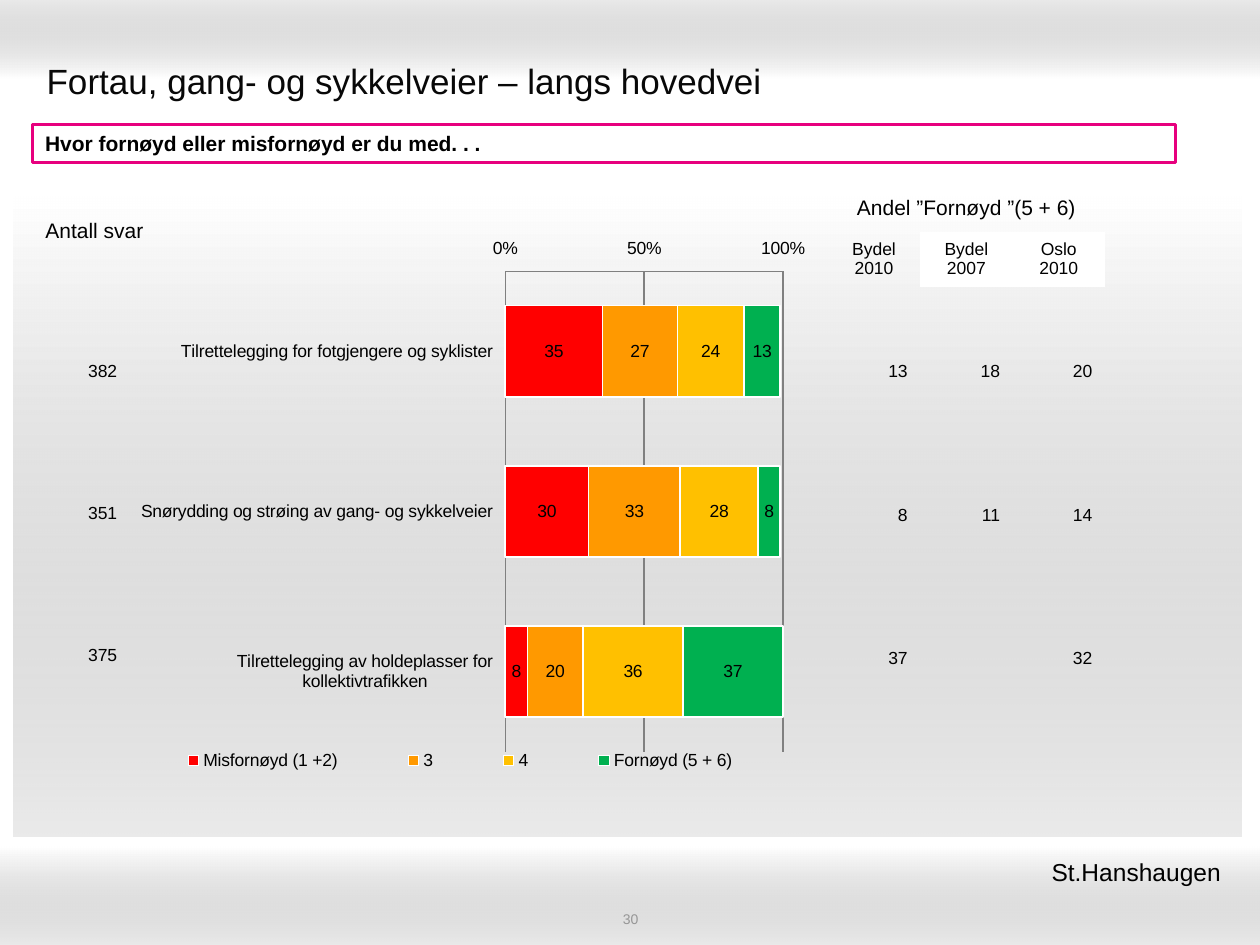
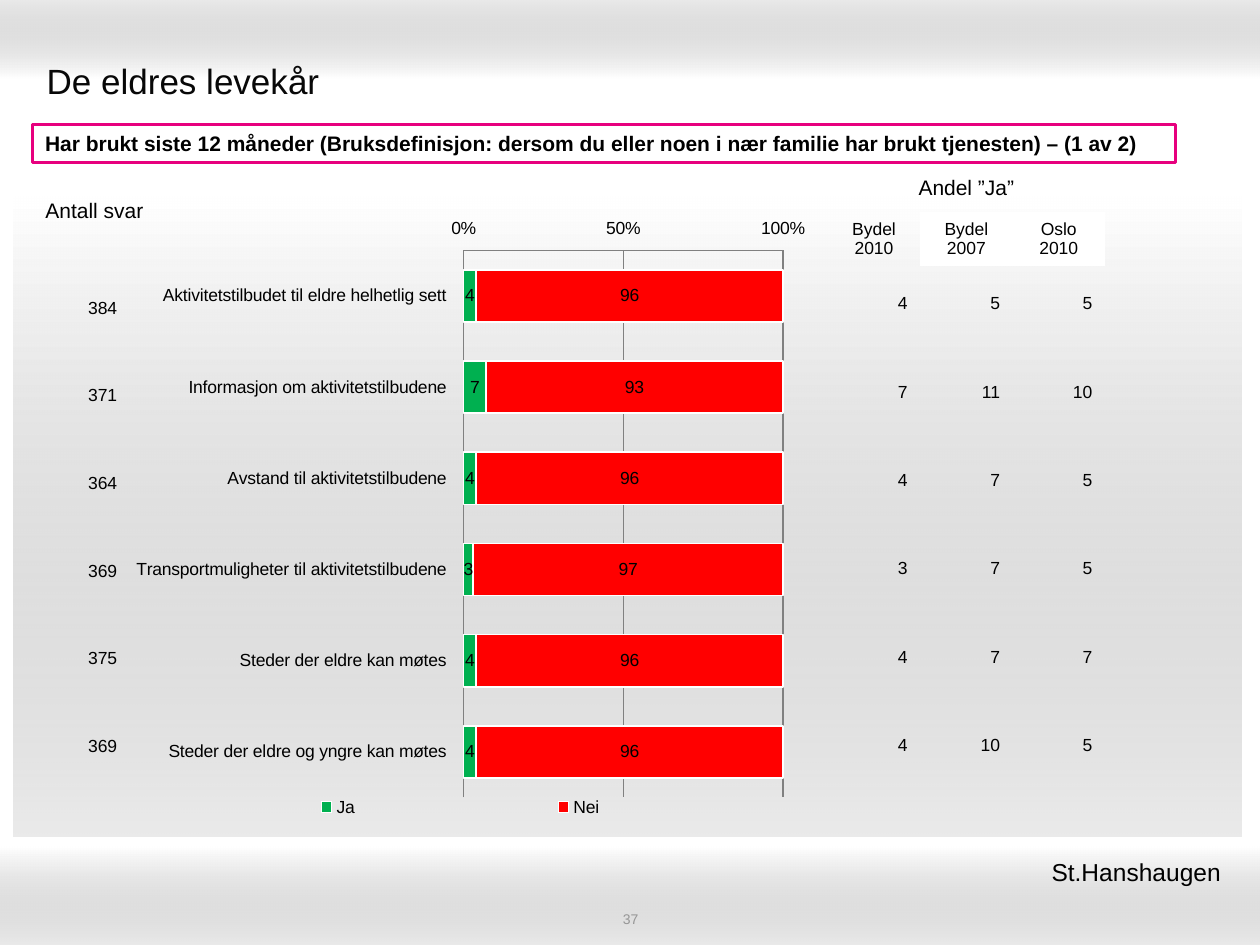
import dataclasses

import lxml.etree
import pptx
import pptx.chart.data
import pptx.dml.color
import pptx.enum.chart
import pptx.enum.shapes
import pptx.enum.text
import pptx.oxml.ns
import pptx.util

ALIGN = pptx.enum.text.PP_ALIGN
MIDDLE = pptx.enum.text.MSO_ANCHOR.MIDDLE
COLS, ROWS = 100, 75
CELL = pptx.util.Inches(0.1)
PLAIN_GRID = "{2D5ABB26-0587-4C30-8999-92F81FD0307C}"


@dataclasses.dataclass(frozen=True)
class Theme:
    font: str = "Arial"
    ink: str = "000000"
    head: str = "080808"
    faint: str = "969696"
    white: str = "FFFFFF"
    shade: str = "999999"
    frame: str = "E7007E"
    rule: str = "808080"
    red: str = "FF0000"
    orange: str = "FF9900"
    yellow: str = "FFC000"
    green: str = "00B050"
    title: int = 20
    place: int = 14
    lead: int = 12
    body: int = 10
    small: int = 8


THEME = Theme()


def rgb(code):
    return pptx.dml.color.RGBColor.from_string(code)


def tag(name):
    return pptx.oxml.ns.qn(name)


def area(left, top, wide, high):
    """Turn grid columns and rows into lengths."""
    return [round(part * CELL) for part in (left, top, wide, high)]


def style(font, size, color=THEME.ink, bold=False):
    font.name, font.size, font.bold = THEME.font, pptx.util.Pt(size), bold
    font.color.rgb = rgb(color)


def write(frame, text, size, align=ALIGN.LEFT, color=THEME.ink, bold=False):
    """Fill a text frame, one paragraph for each line of text."""
    for index, line in enumerate(text.split("\n")):
        para = frame.add_paragraph() if index else frame.paragraphs[0]
        para.alignment = align
        run = para.add_run()
        run.text = line
        style(run.font, size, color, bold)


def add_box(slide, place):
    box = slide.shapes.add_shape(
        pptx.enum.shapes.MSO_SHAPE.RECTANGLE, *area(*place))
    box.shadow.inherit = False
    return box


def add_note(slide, place, text, size, align, color=THEME.ink, inset=1.0):
    note = slide.shapes.add_textbox(*area(*place))
    frame = note.text_frame
    frame.word_wrap = True
    frame.vertical_anchor = MIDDLE
    frame.margin_top = frame.margin_bottom = 0
    frame.margin_right = round(inset * CELL)
    write(frame, text, size, align, color)


def add_bands(slide):
    """Draw the grey bands and move them to the layout behind the slide."""
    bands = [((0, 0, COLS, 6.2), 90),
             ((0, 67.2, COLS, 7.8), 270),
             ((1.1, 15.6, 97.4, 50.8), 270)]
    tree = slide.slide_layout.shapes.element
    for index, (place, angle) in enumerate(bands):
        band = add_box(slide, place)
        band.line.fill.background()
        band.fill.gradient()
        band.fill.gradient_angle = angle
        for stop, code in zip(band.fill.gradient_stops,
                              (THEME.white, THEME.shade)):
            stop.color.rgb = rgb(code)
        last = band.element.findall(".//" + tag("a:srgbClr"))[-1]
        lxml.etree.SubElement(last, tag("a:alpha"), val="20000")
        tree.insert(2 + index, band.element)


def add_title(slide, text):
    title = slide.shapes.title
    title.left, title.top, title.width, title.height = area(2.7, 3.6, 94.5, 5.5)
    title.text_frame.vertical_anchor = MIDDLE
    write(title.text_frame, text, THEME.title, color=THEME.head)


def add_query(slide, text):
    """Add the framed survey question."""
    box = add_box(slide, (2.6, 9.9, 90.7, 3.0))
    box.fill.solid()
    box.fill.fore_color.rgb = rgb(THEME.white)
    box.line.color.rgb = rgb(THEME.frame)
    box.line.width = pptx.util.Pt(2)
    box.text_frame.word_wrap = True
    box.text_frame.vertical_anchor = MIDDLE
    write(box.text_frame, text, THEME.lead, bold=True)


def fill_cell(cell, text, size, align):
    cell.fill.background()
    cell.vertical_anchor = MIDDLE
    if text:
        write(cell.text_frame, text, size, align)


def add_grid(slide, place, rows, size=THEME.body, align=ALIGN.RIGHT):
    """Add a table without borders or bands."""
    shape = slide.shapes.add_table(len(rows), len(rows[0]), *area(*place))
    grid = shape.table
    grid.first_row = grid.horz_banding = False
    shape.element.find(".//" + tag("a:tableStyleId")).text = PLAIN_GRID
    for r, row in enumerate(rows):
        for c, text in enumerate(row):
            fill_cell(grid.cell(r, c), text, size, align)
    return grid


def add_heads(slide, top, text):
    """Add the spanning head and the three column heads."""
    heads = ["Bydel\n2010", "Bydel\n2007", "Oslo\n2010"]
    grid = add_grid(slide, (65.7, top, 22, 8), [[""] * 3, heads],
                    align=ALIGN.CENTER)
    grid.rows[0].height, grid.rows[1].height = area(0, 0, 3.7, 4.3)[2:]
    grid.cell(0, 0).merge(grid.cell(0, 2))
    fill_cell(grid.cell(0, 0), text, THEME.lead, ALIGN.CENTER)
    for c in (1, 2):
        cell = grid.cell(1, c)
        cell.fill.solid()
        cell.fill.fore_color.rgb = rgb(THEME.white)


def set_layout(node, index, shares, inner=False):
    """Fix a chart part at shares of the chart's size."""
    for old in node.findall(tag("c:layout")):
        node.remove(old)
    layout = lxml.etree.Element(tag("c:layout"))
    manual = lxml.etree.SubElement(layout, tag("c:manualLayout"))
    pairs = [("layoutTarget", "inner")] if inner else []
    pairs += [("xMode", "edge"), ("yMode", "edge")]
    pairs += zip("xywh", map(str, shares))
    for name, val in pairs:
        lxml.etree.SubElement(manual, tag("c:" + name), val=val)
    node.insert(index, layout)


def style_axes(chart):
    kinds = pptx.enum.chart
    names, scale = chart.category_axis, chart.value_axis
    names.reverse_order = True
    names.has_major_gridlines = False
    names.major_tick_mark = kinds.XL_TICK_MARK.NONE
    scale.major_tick_mark = kinds.XL_TICK_MARK.INSIDE
    scale.minimum_scale, scale.maximum_scale, scale.major_unit = 0, 100, 50
    scale.has_major_gridlines = True
    scale.tick_labels.number_format = "General\\%"
    scale.tick_labels.number_format_is_linked = False
    for axis in (names, scale):
        axis.minor_tick_mark = kinds.XL_TICK_MARK.NONE
        axis.tick_label_position = kinds.XL_TICK_LABEL_POSITION.LOW
    for part in (names, scale, scale.major_gridlines):
        part.format.line.color.rgb = rgb(THEME.rule)
        part.format.line.width = pptx.util.Pt(0.75)


def add_bars(slide, top, high, shares, names, series):
    data = pptx.chart.data.CategoryChartData(number_format="0")
    data.categories = names
    for name, _, vals in series:
        data.add_series(name, vals)
    chart = slide.shapes.add_chart(
        pptx.enum.chart.XL_CHART_TYPE.BAR_STACKED,
        *area(9.8, top, 55.1, high), data).chart
    chart.has_title = False
    style(chart.font, THEME.body)
    style_axes(chart)
    plot = chart.plots[0]
    plot.gap_width, plot.overlap, plot.vary_by_categories = 75, 100, False
    plot.has_data_labels = True
    labels = plot.data_labels
    labels.show_value = True
    labels.number_format, labels.number_format_is_linked = "0", False
    for item, (_, color, _) in zip(plot.series, series):
        item.format.fill.solid()
        item.format.fill.fore_color.rgb = rgb(color)
        item.format.line.color.rgb = rgb(THEME.white)
        item.format.line.width = pptx.util.Pt(1)
    chart.has_legend = True
    chart.legend.position = pptx.enum.chart.XL_LEGEND_POSITION.BOTTOM
    chart.legend.include_in_layout = False
    root = chart.element
    set_layout(root.find(".//" + tag("c:plotArea")), 0, shares, inner=True)
    set_layout(root.find(".//" + tag("c:legend")), 1, (0, 0.91, 0.97, 0.05))


def add_page(deck, number, title, query):
    slide = deck.slides.add_slide(deck.slide_layouts[5])
    if len(deck.slides) == 1:
        add_bands(slide)
    add_title(slide, title)
    add_note(slide, (34.2, 72.2, 31.7, 1.4), number, THEME.small,
             ALIGN.CENTER, THEME.faint)
    add_query(slide, query)
    add_note(slide, (61, 67.5, 37.4, 3.4), "St.Hanshaugen", THEME.place,
             ALIGN.RIGHT, inset=1.5)
    return slide


def add_counts(slide, top, counts, place):
    """Add the number of answers and its head."""
    add_grid(slide, place, [[count] for count in counts])
    add_grid(slide, (0.4, top, 14.2, 5.9), [["Antall svar"]],
             THEME.lead, ALIGN.CENTER)


def add_paths(deck):
    slide = add_page(deck, "30", "Fortau, gang- og sykkelveier – langs hovedvei",
                     "Hvor fornøyd eller misfornøyd er du med. . .")
    names = ["Tilrettelegging for fotgjengere og syklister",
             "Snørydding og strøing av gang- og sykkelveier",
             "Tilrettelegging av holdeplasser for kollektivtrafikken"]
    series = [("Misfornøyd (1 +2)", THEME.red, (35, 30, 8)),
              ("3", THEME.orange, (27, 33, 20)),
              ("4", THEME.yellow, (24, 28, 36)),
              ("Fornøyd (5 + 6)", THEME.green, (13, 8, 37))]
    add_bars(slide, 17.9, 45.4, (0.55, 0.08, 0.4, 0.84), names, series)
    add_grid(slide, (65.7, 23.8, 22, 34.2),
             [["13", "18", "20"], ["8", "11", "14"], ["37", "", "32"]])
    add_heads(slide, 14.7, "Andel ”Fornøyd ”(5 + 6)")
    add_counts(slide, 15.4, ["382", "351", "375"], (5.1, 23.9, 5.2, 33.7))


def add_elders(deck):
    slide = add_page(deck, "37", "De eldres levekår",
                     "Har brukt siste 12 måneder (Bruksdefinisjon: dersom du "
                     "eller noen i nær familie har brukt tjenesten) – (1 av 2)")
    names = ["Aktivitetstilbudet til eldre helhetlig sett ",
             "Informasjon om aktivitetstilbudene ",
             "Avstand til aktivitetstilbudene ",
             "Transportmuligheter til aktivitetstilbudene ",
             "Steder der eldre kan møtes ",
             "Steder der eldre og yngre kan møtes "]
    users = (4, 7, 4, 3, 4, 4)
    series = [("Ja", THEME.green, users),
              ("Nei", THEME.red, [100 - user for user in users])]
    add_bars(slide, 16.3, 51.1, (0.49, 0.07, 0.46, 0.85), names, series)
    past, city = (5, 11, 7, 7, 7, 10), (5, 10, 5, 5, 7, 5)
    add_grid(slide, (65.7, 20.6, 22, 42.1),
             [[str(val) for val in row] for row in zip(users, past, city)])
    add_heads(slide, 13.1, "Andel ”Ja”")
    add_counts(slide, 13.8, ["384", "371", "364", "369", "375", "369"],
               (5.1, 21, 5.2, 41.7))


def main():
    deck = pptx.Presentation()
    deck.slide_width, deck.slide_height = COLS * CELL, ROWS * CELL
    add_paths(deck)
    add_elders(deck)
    deck.save("out.pptx")


if __name__ == "__main__":
    main()
